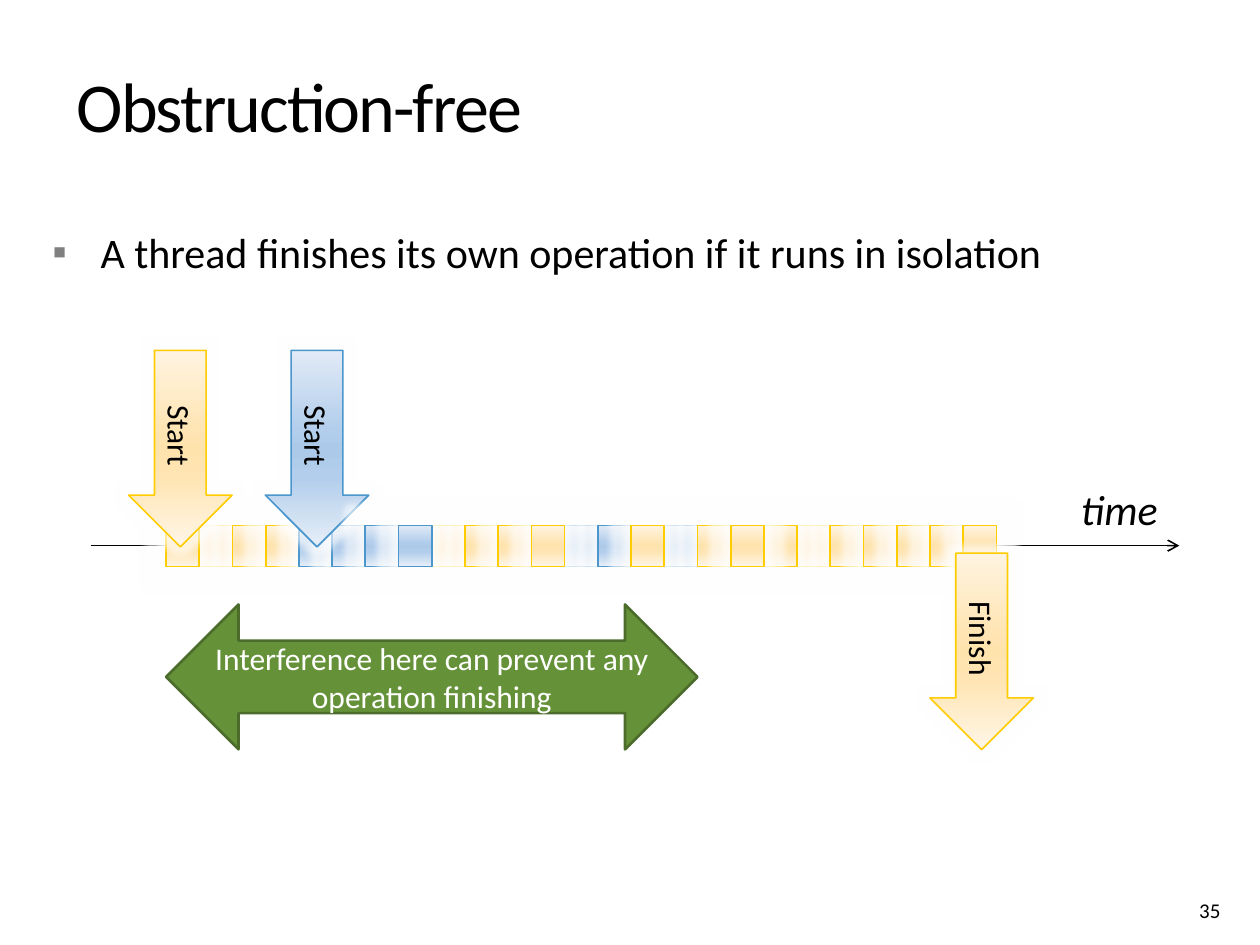
from dataclasses import dataclass

from lxml import etree
from pptx import Presentation
from pptx import util as u
from pptx.dml import color
from pptx.enum import shapes, text
from pptx.oxml import ns

Pt = u.Pt
KIND = shapes.MSO_SHAPE
MID = text.MSO_ANCHOR.MIDDLE
FONT = "Calibri"
THIN = 0.94


@dataclass(frozen=True)
class Tone:
    line: str
    stops: tuple


@dataclass(frozen=True)
class Cells:
    tone: Tone
    slots: tuple


@dataclass(frozen=True)
class Arrow:
    label: str
    left: float
    top: float
    tone: Tone


SPOTS = (0, 40, 50, 65, 100)
GOLD = Tone("FFCC00", ("FFF4E1", "FFE5B4", "FFE3AD", "FFE5B4", "FFF6E7"))
BLUE = Tone("4A96CD", ("E1EAF6", "B3CEEC", "ACC9EA", "B3CEEC", "E7EFF8"))

# Time slots and arrows from back to front; later ones glow over earlier ones
STEPS = (
    Cells(GOLD, (1, 2, 3, 8, 9, 10, 0)),
    Arrow("Start", 73.5, 200.2, GOLD),
    Cells(BLUE, (12, 13, 4, 5)),
    Cells(GOLD, (11,)),
    Cells(BLUE, (15,)),
    Arrow("Start", 151.6, 200.2, BLUE),
    Cells(GOLD, (19, 20, 21, 22, 23, 24, 18)),
    Arrow("Finish", 531.4, 316.1, GOLD),
    Cells(BLUE, (6, 7)),
    Cells(GOLD, (14, 16, 17)),
)
ROW_X, ROW_Y, CELL_W, CELL_H = 94.9, 300.2, 18.98, 23.6


def rgb(code: str) -> color.RGBColor:
    return color.RGBColor.from_string(code)


def sub(node, tag: str, **attrs):
    return etree.SubElement(node, ns.qn(tag), {k: str(v) for k, v in attrs.items()})


def put(obj, vals: dict) -> None:
    for name, val in vals.items():
        setattr(obj, name, val)


def write(shape, words: str, size: float, ink: str = "000000",
          frame: dict | None = None, para: dict | None = None,
          font: dict | None = None):
    """Set one paragraph of text and return it."""
    put(shape.text_frame, {"word_wrap": True, **(frame or {})})
    line = shape.text_frame.paragraphs[0]
    put(line, para or {})
    run = line.add_run()
    run.text = words
    put(run.font, {"name": FONT, "size": Pt(size), **(font or {})})
    run.font.color.rgb = rgb(ink)
    return line


def box(slide, left: float, top: float, wide: float, high: float):
    return slide.shapes.add_textbox(Pt(left), Pt(top), Pt(wide), Pt(high))


def block(slide, kind, left: float, top: float, wide: float, high: float,
          edge: str, width: float):
    shape = slide.shapes.add_shape(kind, Pt(left), Pt(top), Pt(wide), Pt(high))
    shape.shadow.inherit = False
    shape.line.color.rgb = rgb(edge)
    shape.line.width = Pt(width)
    return shape


def shade(shape, tone: Tone) -> None:
    """Give a shape its vertical gradient and a white glow."""
    shape.fill.gradient()
    shape.fill.gradient_angle = 270
    props = shape._element.spPr
    stops = props.find(".//" + ns.qn("a:gsLst"))
    for old in list(stops):
        stops.remove(old)
    for spot, code in zip(SPOTS, tone.stops):
        sub(sub(stops, "a:gs", pos=spot * 1000), "a:srgbClr", val=code)
    glow = sub(props.find(ns.qn("a:effectLst")), "a:glow", rad=Pt(8))
    sub(sub(glow, "a:srgbClr", val="FFFFFF"), "a:alpha", val=60000)


def draw_cells(slide, group: Cells) -> None:
    for slot in group.slots:
        cell = block(slide, KIND.RECTANGLE, ROW_X + slot * CELL_W, ROW_Y,
                     CELL_W, CELL_H, group.tone.line, THIN)
        shade(cell, group.tone)


def draw_arrow(slide, item: Arrow) -> None:
    arrow = block(slide, KIND.DOWN_ARROW, item.left, item.top, 59.1, 112.3,
                  item.tone.line, THIN)
    shade(arrow, item.tone)
    write(arrow, item.label, 18, frame={"vertical_anchor": MID},
          para={"alignment": text.PP_ALIGN.CENTER})
    arrow.text_frame._txBody.bodyPr.set("vert", "vert")


def draw_axis(slide) -> None:
    axis = slide.shapes.add_connector(
        shapes.MSO_CONNECTOR.STRAIGHT, Pt(51.8), Pt(311.8), Pt(673.9), Pt(311.8))
    axis.line.color.rgb = rgb("000000")
    axis.line.width = Pt(THIN)
    sub(axis.line._get_or_add_ln(), "a:tailEnd", type="arrow")
    sub(axis._element.spPr, "a:effectLst")
    write(box(slide, 610.6, 272.9, 59, 36), "time", 24,
          frame={"word_wrap": False}, font={"italic": True})


def draw_text(slide) -> None:
    title = write(box(slide, 36.7, 40.3, 635, 59.8), "Obstruction-free", 40,
                  para={"line_spacing": Pt(40)})
    title.runs[0].font._element.set("spc", "-100")

    point = write(box(slide, 18, 126, 691.2, 89.3),
                  "A thread finishes its own operation if it runs in isolation",
                  24, para={"space_before": Pt(7)})
    props = point._p.get_or_add_pPr()
    put_at = {"marL": Pt(32.4), "indent": Pt(-27.4)}
    for name, val in put_at.items():
        props.set(name, str(val))
    sub(sub(props, "a:buClr"), "a:srgbClr", val="808080")
    sub(props, "a:buSzPct", val=95000)
    sub(props, "a:buFont", typeface=FONT)
    sub(props, "a:buChar", char="▪")


def draw_span(slide) -> None:
    span = block(slide, KIND.LEFT_RIGHT_ARROW, ROW_X, 345.4, 16 * CELL_W, 82.8,
                 "4B6C2A", 1.5)
    span.fill.solid()
    span.fill.fore_color.rgb = rgb("659239")
    write(span, "Interference here can prevent any operation finishing", 18,
          "FFFFFF", frame={"vertical_anchor": MID},
          para={"alignment": text.PP_ALIGN.CENTER})


def main() -> None:
    deck = Presentation()
    put(deck, {"slide_width": Pt(720), "slide_height": Pt(540)})
    slide = deck.slides.add_slide(deck.slide_layouts[6])

    # Time axis, title and bullet
    draw_axis(slide)
    draw_text(slide)

    # Slots and their start and finish arrows
    for step in STEPS:
        if isinstance(step, Cells):
            draw_cells(slide, step)
        else:
            draw_arrow(slide, step)

    # Interference span and page number
    draw_span(slide)
    write(box(slide, 678.2, 501.8, 36, 28.8), "35", 12,
          frame={"vertical_anchor": text.MSO_ANCHOR.BOTTOM})
    deck.save("out.pptx")


if __name__ == "__main__":
    main()
